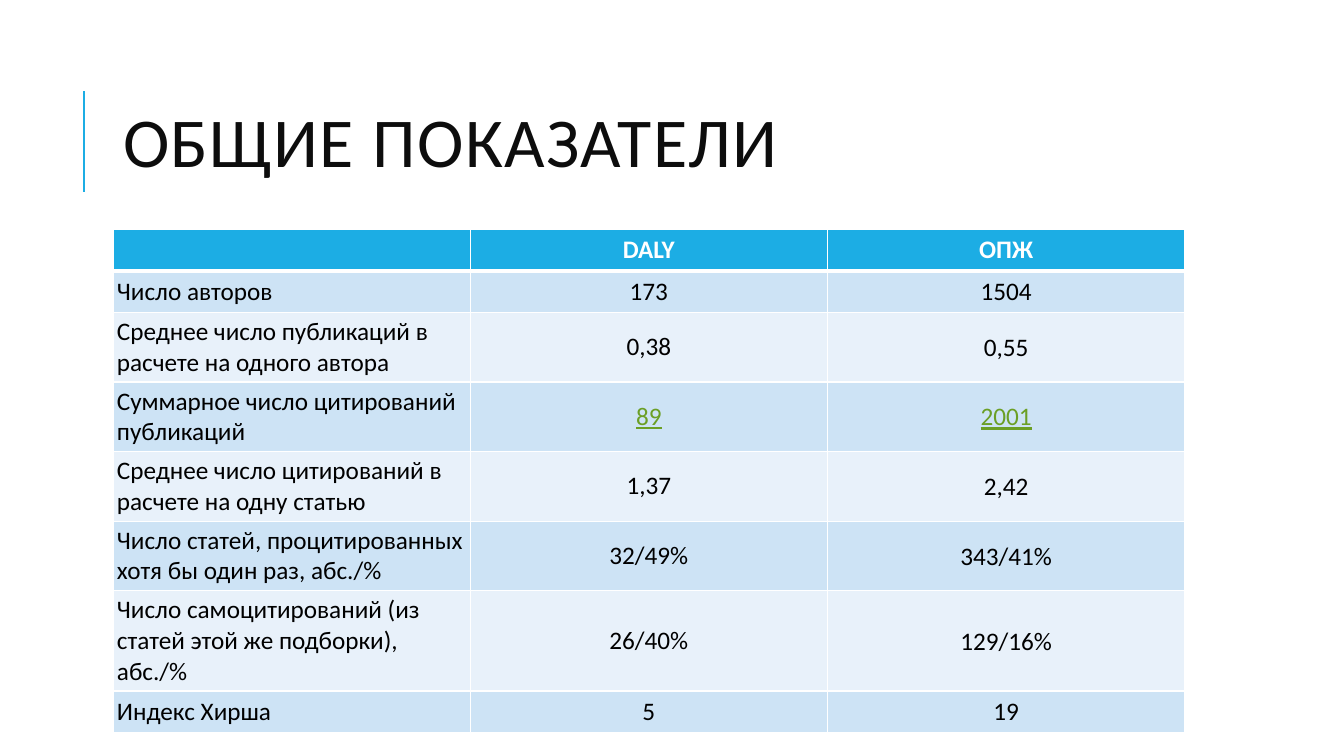
from lxml import etree
from pptx import Presentation
from pptx.dml.color import RGBColor
from pptx.enum.shapes import MSO_CONNECTOR
from pptx.enum.text import MSO_ANCHOR, MSO_AUTO_SIZE, PP_ALIGN
from pptx.oxml.ns import qn
from pptx.util import Inches, Pt

STRAIGHT = MSO_CONNECTOR.STRAIGHT
MIDDLE, TOP = MSO_ANCHOR.MIDDLE, MSO_ANCHOR.TOP
LEFT, CENTER = PP_ALIGN.LEFT, PP_ALIGN.CENTER
NO_AUTOFIT = MSO_AUTO_SIZE.NONE

FONT = "Calibri"
ACCENT, WHITE, BLACK = "1CADE4", "FFFFFF", "000000"
TITLE_COLOR, LINK_COLOR = "0D0D0D", "6B9F25"
BANDS = ("CDE3F5", "E8F1FA")
ROW_HEIGHT = 0.41
LINKED_ROW = 3

ROWS = [
    ("", "DALY", "ОПЖ"),
    ("Число авторов", "173", "1504"),
    ("Среднее число публикаций в расчете на одного автора", "0,38", "0,55"),
    ("Суммарное число цитирований публикаций", "89", "2001"),
    ("Среднее число цитирований в расчете на одну статью", "1,37", "2,42"),
    ("Число статей, процитированных хотя бы один раз, абс./%", "32/49%", "343/41%"),
    ("Число самоцитирований (из статей этой же подборки), абс./%", "26/40%", "129/16%"),
    ("Индекс Хирша", "5", "19"),
]


def color(value):
    return RGBColor.from_string(value)


def add_run(paragraph, text, size, text_color, bold=False, underline=False):
    run = paragraph.add_run()
    run.text = text
    run.font.name = FONT
    run.font.size = Pt(size)
    run.font.bold = bold
    run.font.underline = underline
    run.font.color.rgb = color(text_color)
    return run


def add_accent_line(slide, left, top, height):
    line = slide.shapes.add_connector(
        STRAIGHT, Inches(left), Inches(top + height), Inches(left), Inches(top)
    )
    line.line.color.rgb = color(ACCENT)
    line.line.width = Pt(1.5)
    etree.SubElement(line._element.spPr, qn("a:effectLst"))


def add_title(slide, left, top, width, height):
    title = slide.shapes.title
    title.left, title.top = Inches(left), Inches(top)
    title.width, title.height = Inches(width), Inches(height)
    frame = title.text_frame
    frame.word_wrap = True
    frame.auto_size = NO_AUTOFIT
    frame.vertical_anchor = MIDDLE
    paragraph = frame.paragraphs[0]
    paragraph.alignment = LEFT
    paragraph.line_spacing = 0.8
    run = add_run(paragraph, "ОБЩИЕ ПОКАЗАТЕЛИ", 50, TITLE_COLOR)
    run.font._element.set("spc", "100")


def set_borders(cell, top_width, bottom_width):
    properties = cell._tc.get_or_add_tcPr()
    widths = {"a:lnL": 1, "a:lnR": 1, "a:lnT": top_width, "a:lnB": bottom_width}
    for position, (tag, width) in enumerate(widths.items()):
        border = etree.Element(qn(tag), w=str(Pt(width)))
        fill = etree.SubElement(border, qn("a:solidFill"))
        etree.SubElement(fill, qn("a:srgbClr"), val=WHITE)
        properties.insert(position, border)


def set_margins(cell, sides, bottom):
    cell.margin_left = cell.margin_right = cell.margin_top = Inches(sides)
    cell.margin_bottom = Inches(bottom)


def fill_cell(cell, text, row, column):
    header = row == 0
    linked = row == LINKED_ROW and column > 0
    cell.fill.solid()
    cell.fill.fore_color.rgb = color(ACCENT if header else BANDS[(row - 1) % 2])
    set_borders(cell, 3 if row == 1 else 1, 3 if header else 1)
    cell.vertical_anchor = TOP if header else MIDDLE
    if not header:
        if column == 2:
            set_margins(cell, 0.01, 0)
        else:
            set_margins(cell, 0.04, 0.04)
    paragraph = cell.text_frame.paragraphs[0]
    paragraph.alignment = CENTER if column else LEFT
    if text:
        text_color = WHITE if header else LINK_COLOR if linked else BLACK
        add_run(paragraph, text, 18, text_color, bold=header, underline=linked)


def add_indicator_table(slide, left, top, width):
    table = slide.shapes.add_table(
        len(ROWS), len(ROWS[0]), Inches(left), Inches(top),
        Inches(width), Inches(ROW_HEIGHT * len(ROWS)),
    ).table
    for row, texts in enumerate(ROWS):
        table.rows[row].height = Inches(ROW_HEIGHT)
        for column, text in enumerate(texts):
            fill_cell(table.cell(row, column), text, row, column)


def main():
    presentation = Presentation()
    presentation.slide_width = Inches(13.33)
    presentation.slide_height = Inches(7.5)
    slide = presentation.slides.add_slide(presentation.slide_layouts[5])
    slide.background.fill.solid()
    slide.background.fill.fore_color.rgb = color(WHITE)
    add_accent_line(slide, 0.83, 0.9, 1)
    add_title(slide, 1.12, 0.64, 10.63, 1.64)
    add_indicator_table(slide, 1.12, 2.28, 10.63)
    presentation.save("out.pptx")


if __name__ == "__main__":
    main()
